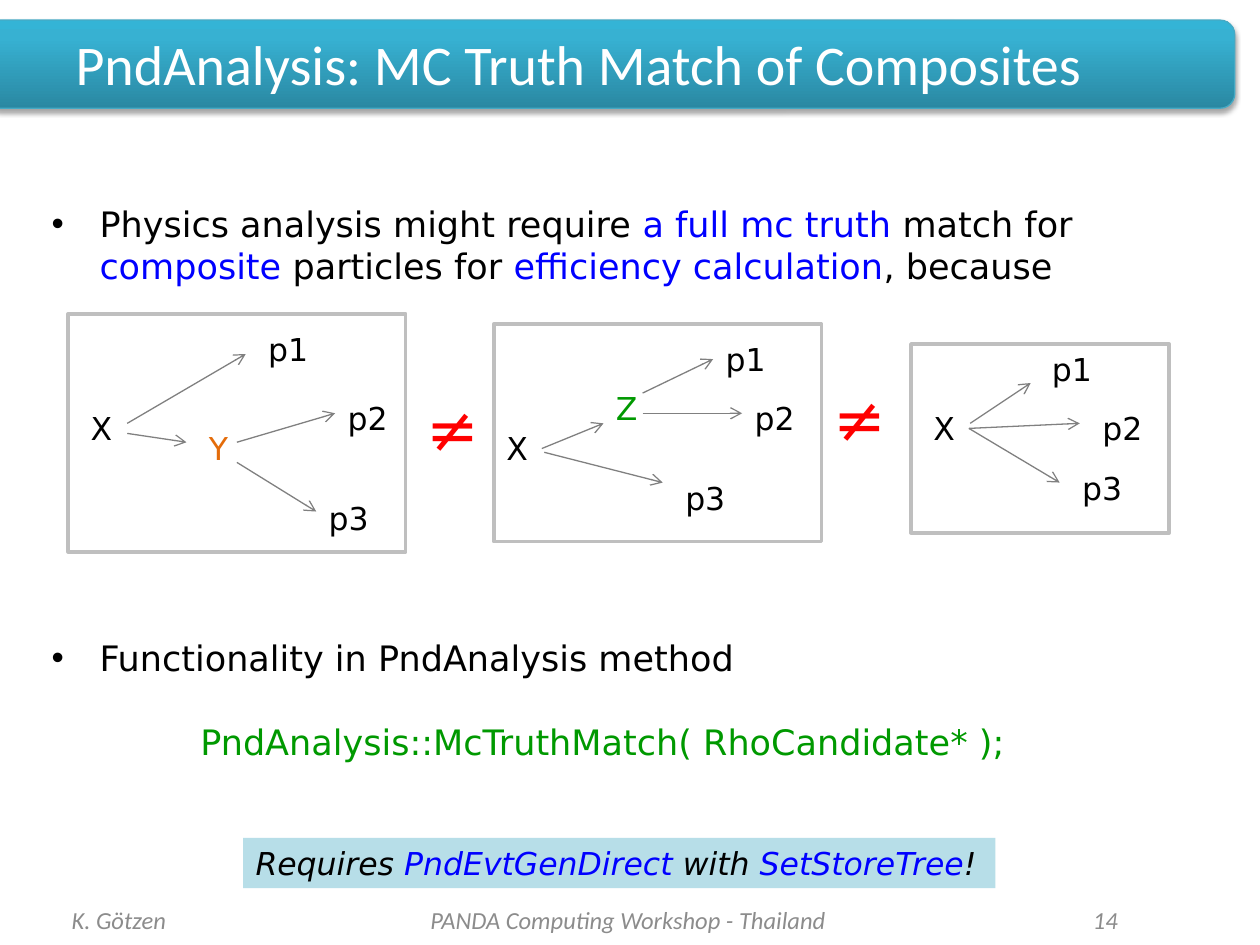
from copy import deepcopy

from lxml.etree import SubElement
from pptx import Presentation
from pptx.dml.color import RGBColor
from pptx.enum.shapes import MSO_CONNECTOR, MSO_SHAPE
from pptx.enum.text import MSO_ANCHOR, MSO_AUTO_SIZE, PP_ALIGN
from pptx.oxml.ns import qn
from pptx.util import Inches, Pt

COLORS = {
    "black": "000000", "white": "FFFFFF", "blue": "0000FF", "green": "009900",
    "orange": "E46C0A", "red": "FF0000", "arrow": "808080", "frame": "BFBFBF",
    "footer": "8C8C8C", "note": "B7DEE8", "banner_edge": "46AAC5",
    "banner_low": "2A88A2", "banner_mid": "37B1D2", "banner_high": "34B4D6",
}
BANNER_STOPS = [(0, "banner_low"), (0.8, "banner_mid"), (1, "banner_high")]
HEADING, BODY = "Calibri", "DejaVu Sans"
LEFT_SIDE, RIGHT_SIDE = 1, 3

REQUIREMENT = [
    ("Physics analysis might require ", "black"), ("a full mc truth ", "blue"),
    ("match for ", "black"), ("composite", "blue"), (" particles for ", "black"),
    ("efficiency calculation", "blue"), (", because", "black"),
]
METHOD = [("Functionality in PndAnalysis method", "black")]
CALL = [("PndAnalysis::McTruthMatch( RhoCandidate* );", "green")]
NOTE = [
    ("Requires ", "black"), ("PndEvtGenDirect", "blue"), (" with ", "black"),
    ("SetStoreTree", "blue"), ("!", "black"),
]

DECAYS = [
    {"frame": (0.54, 2.49, 2.68, 1.89),
     "particles": [("X", 0.62, 3.2), ("p1", 2.03, 2.57), ("Y", 1.56, 3.36),
                   ("p2", 2.66, 3.12), ("p3", 2.51, 3.91)],
     "arrows": [((1.01, 3.36), (1.95, 2.81), None, None),
                ((1.01, 3.44), (1.48, 3.51), None, None),
                ((1.88, 3.51), (2.66, 3.28), None, None),
                ((1.88, 3.67), (2.51, 4.06), None, None)]},
    {"frame": (3.92, 2.57, 2.6, 1.73),
     "particles": [("X", 3.92, 3.36), ("p1", 5.66, 2.65), ("Z", 4.79, 3.04),
                   ("p2", 5.89, 3.12), ("p3", 5.34, 3.75)],
     "arrows": [((5.1, 3.12), (5.66, 2.85), None, "p1"),
                ((4.3, 3.56), (4.79, 3.36), "X", None),
                ((5.1, 3.28), (5.89, 3.28), None, None),
                ((4.32, 3.59), (5.26, 3.83), None, None)]},
    {"frame": (7.23, 2.73, 2.05, 1.5),
     "particles": [("X", 7.31, 3.2), ("p1", 8.25, 2.73), ("p2", 8.65, 3.2),
                   ("p3", 8.49, 3.67)],
     "arrows": [((7.7, 3.36), (8.18, 3.04), None, None),
                ((7.68, 3.4), (8.57, 3.36), "X", None),
                ((7.68, 3.4), (8.41, 3.83), "X", None)]},
]
PARTICLE_COLORS = {"Y": "orange", "Z": "green"}
FOOTERS = [
    ("K. Götzen", 0.47, 2.33, PP_ALIGN.LEFT),
    ("PANDA Computing Workshop - Thailand", 3.03, 3.91, PP_ALIGN.CENTER),
    ("14", 7.5, 1.47, PP_ALIGN.RIGHT),
]


def rgb(color):
    """Return the named colour."""
    return RGBColor.from_string(COLORS[color])


def place(part, left, top, width, height):
    """Move and size a placeholder."""
    part.left, part.top = Inches(left), Inches(top)
    part.width, part.height = Inches(width), Inches(height)


def style(run, size, color, face=BODY, italic=False):
    """Format one run."""
    run.font.size, run.font.name, run.font.italic = Pt(size), face, italic
    run.font.color.rgb = rgb(color)


def write_pieces(paragraph, pieces, size, italic=False):
    """Write coloured pieces of text into a paragraph."""
    for words, color in pieces:
        run = paragraph.add_run()
        run.text = words
        style(run, size, color, italic=italic)


def add_label(shapes, words, box, size, color, face=BODY, italic=False):
    """Add a one-line text box."""
    label = shapes.add_textbox(*map(Inches, box))
    frame = label.text_frame
    frame.text = words
    frame.word_wrap = False
    style(frame.paragraphs[0].runs[0], size, color, face, italic)
    return label


def add_box(slide, kind, box):
    """Add a preset shape without fill or inherited shadow."""
    shape = slide.shapes.add_shape(kind, *map(Inches, box))
    shape.shadow.inherit = False
    shape.fill.background()
    return shape


def add_banner(slide):
    """Add the gradient banner behind the title."""
    banner = add_box(slide, MSO_SHAPE.ROUNDED_RECTANGLE, (-0.12, 0.16, 9.92, 0.7))
    banner.line.color.rgb, banner.line.width = rgb("banner_edge"), Pt(0.75)
    banner.fill.gradient()
    banner.fill.gradient_angle = 90
    properties = banner._element.spPr
    stops = properties.find(qn("a:gradFill")).find(qn("a:gsLst"))
    stops.append(deepcopy(stops[-1]))
    for stop, (position, color) in zip(banner.fill.gradient_stops, BANNER_STOPS):
        stop.position = position
        stop.color.rgb = rgb(color)
    shadow = SubElement(properties.find(qn("a:effectLst")), qn("a:outerShdw"),
                        blurRad=str(Pt(3.1)), dist=str(Pt(1.8)), dir="5400000",
                        rotWithShape="0")
    black = SubElement(shadow, qn("a:srgbClr"), val=COLORS["black"])
    SubElement(black, qn("a:alpha"), val="35000")
    slide.shapes._spTree.insert(2, banner._element)


def write_title(slide):
    """Fill the title placeholder."""
    title = slide.shapes.title
    place(title, 0.5, 0.18, 9, 0.64)
    frame = title.text_frame
    frame.text = "PndAnalysis: MC Truth Match of Composites"
    frame.auto_size, frame.vertical_anchor = MSO_AUTO_SIZE.NONE, MSO_ANCHOR.MIDDLE
    frame.paragraphs[0].alignment = PP_ALIGN.LEFT
    style(frame.paragraphs[0].runs[0], 32, "white", HEADING)


def write_body(slide):
    """Fill the body placeholder with two bullets and the method call."""
    body = slide.placeholders[1]
    place(body, 0.31, 1.56, 9.38, 5.39)
    frame = body.text_frame
    frame.auto_size = MSO_AUTO_SIZE.NONE
    items = [(REQUIREMENT, 0, True), (METHOD, 200, True), (CALL, 24, False)]
    for index, (pieces, gap, bulleted) in enumerate(items):
        paragraph = frame.add_paragraph() if index else frame.paragraphs[0]
        properties = paragraph._p.get_or_add_pPr()
        properties.set("marL", str(Inches(0.38 if bulleted else 1.18)))
        properties.set("indent", str(Inches(-0.38 if bulleted else 0)))
        if bulleted:
            SubElement(properties, qn("a:buChar"), char="•")
        else:
            SubElement(properties, qn("a:buNone"))
        paragraph.space_before = Pt(gap)
        write_pieces(paragraph, pieces, 20)


def add_arrow(shapes, start, end, source, target):
    """Add an arrow, joined to its particles where they are given."""
    points = [Inches(value) for value in (*start, *end)]
    arrow = shapes.add_connector(MSO_CONNECTOR.STRAIGHT, *points)
    arrow.line.color.rgb, arrow.line.width = rgb("arrow"), Pt(0.75)
    SubElement(arrow.line._get_or_add_ln(), qn("a:tailEnd"), type="arrow")
    SubElement(arrow._element.spPr, qn("a:effectLst"))
    if source:
        arrow.begin_connect(source, RIGHT_SIDE)
    if target:
        arrow.end_connect(target, LEFT_SIDE)


def add_decay(slide, decay):
    """Add one framed decay tree."""
    tree = slide.shapes.add_group_shape().shapes
    particles = {}
    for name, left, top in decay["particles"]:
        width = 0.52 if len(name) > 1 else 0.38
        color = PARTICLE_COLORS.get(name, "black")
        particles[name] = add_label(tree, name, (left, top, width, 0.4), 18, color)
    for start, end, source, target in decay["arrows"]:
        add_arrow(tree, start, end, particles.get(source), particles.get(target))
    frame = add_box(slide, MSO_SHAPE.RECTANGLE, decay["frame"])
    frame.line.color.rgb, frame.line.width = rgb("frame"), Pt(2)


def add_note(slide):
    """Add the highlighted requirement."""
    note = add_box(slide, MSO_SHAPE.RECTANGLE, (1.93, 6.65, 5.97, 0.4))
    note.fill.solid()
    note.fill.fore_color.rgb = rgb("note")
    note.line.fill.background()
    note.text_frame.word_wrap = False
    paragraph = note.text_frame.paragraphs[0]
    paragraph.alignment = PP_ALIGN.LEFT
    write_pieces(paragraph, NOTE, 18, italic=True)


def add_footer(slide, words, left, width, alignment):
    """Add one part of the footer."""
    footer = add_label(slide.shapes, words, (left, 7.1, width, 0.4), 14, "footer",
                       HEADING, True)
    footer.text_frame.word_wrap = True
    footer.text_frame.vertical_anchor = MSO_ANCHOR.MIDDLE
    footer.text_frame.paragraphs[0].alignment = alignment


def main():
    """Build and save the slide."""
    deck = Presentation()
    deck.slide_width, deck.slide_height = Inches(10), Inches(7.5)
    slide = deck.slides.add_slide(deck.slide_layouts[1])
    add_banner(slide)
    write_title(slide)
    write_body(slide)
    for decay in DECAYS:
        add_decay(slide, decay)
    for left, top in [(3.29, 3.04), (6.52, 2.96)]:
        add_label(slide.shapes, "≠", (left, top, 0.62, 0.71), 36, "red")
    add_note(slide)
    for footer in FOOTERS:
        add_footer(slide, *footer)
    deck.save("out.pptx")


if __name__ == "__main__":
    main()
